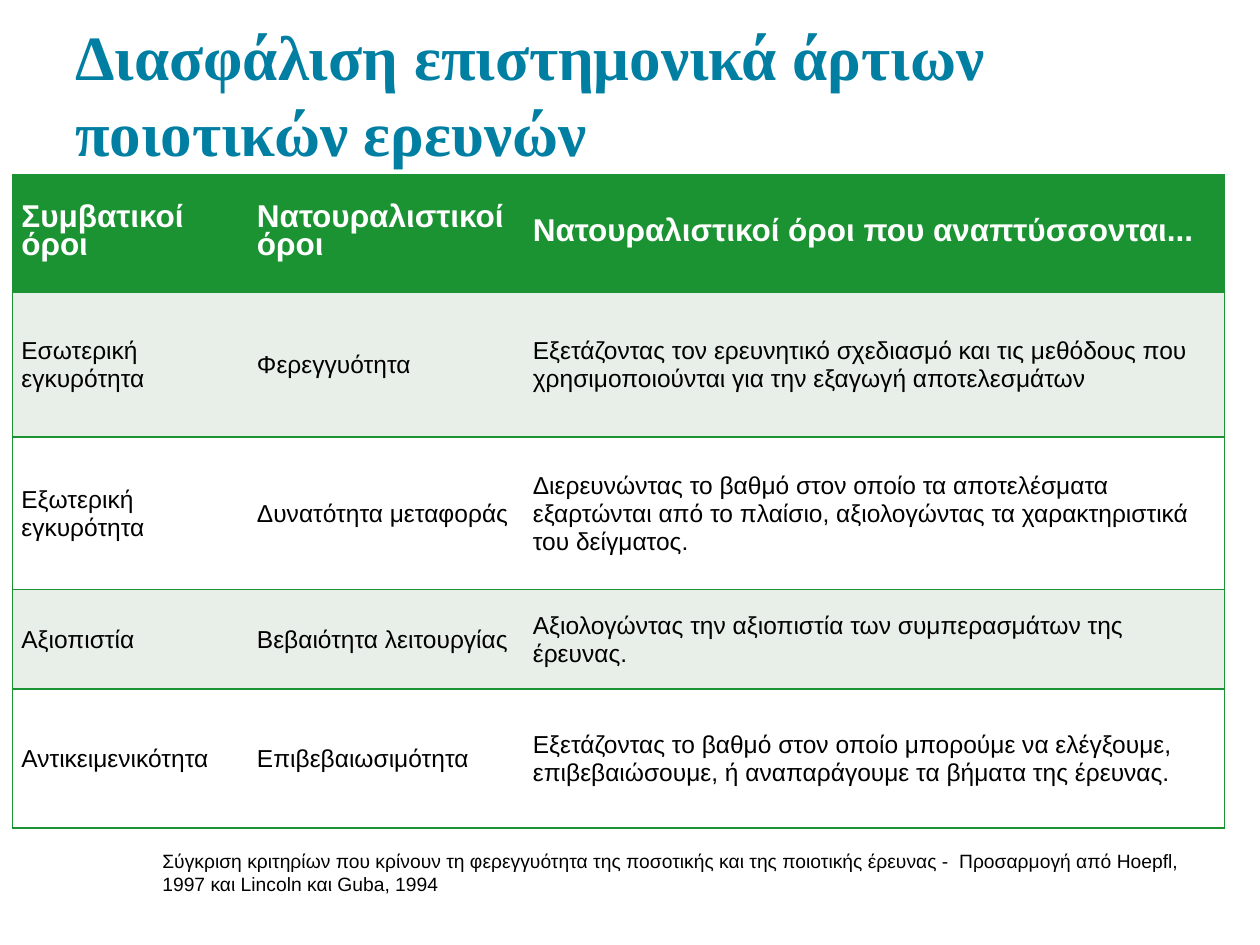
from dataclasses import dataclass

from lxml.etree import SubElement
from pptx import Presentation
from pptx.dml.color import RGBColor
from pptx.enum.text import MSO_ANCHOR
from pptx.oxml.ns import qn
from pptx.util import Inches, Pt


@dataclass(frozen=True)
class Theme:
    title: str = "007FA3"
    green: str = "1B9332"
    band: str = "E8EEE8"
    white: str = "FFFFFF"
    black: str = "000000"
    serif: str = "Times New Roman"
    sans: str = "Arial"
    title_size: int = 36
    header_size: int = 18
    body_size: int = 14
    caption_size: int = 11


THEME = Theme()

TITLE = "Διασφάλιση επιστημονικά άρτιων ποιοτικών ερευνών"
CAPTION = (
    "Σύγκριση κριτηρίων που κρίνουν τη φερεγγυότητα της ποσοτικής και της "
    "ποιοτικής έρευνας -  Προσαρμογή από Hoepfl, 1997 και Lincoln και Guba, 1994"
)
COLUMN_WIDTHS = (1.87, 2.19, 5.56)
ROW_HEIGHTS = (0.93, 1.15, 1.21, 0.79, 1.1)
CRITERIA = (
    ("Συμβατικοί όροι", "Νατουραλιστικοί όροι",
     "Νατουραλιστικοί όροι που αναπτύσσονται..."),
    ("Εσωτερική εγκυρότητα", "Φερεγγυότητα",
     "Εξετάζοντας τον ερευνητικό σχεδιασμό και τις μεθόδους που "
     "χρησιμοποιούνται για την εξαγωγή αποτελεσμάτων"),
    ("Εξωτερική εγκυρότητα", "Δυνατότητα μεταφοράς",
     "Διερευνώντας το βαθμό στον οποίο τα αποτελέσματα εξαρτώνται από το "
     "πλαίσιο, αξιολογώντας τα χαρακτηριστικά του δείγματος."),
    ("Αξιοπιστία", "Βεβαιότητα λειτουργίας",
     "Αξιολογώντας την αξιοπιστία των συμπερασμάτων της έρευνας."),
    ("Αντικειμενικότητα", "Επιβεβαιωσιμότητα",
     "Εξετάζοντας το βαθμό στον οποίο μπορούμε να ελέγξουμε, "
     "επιβεβαιώσουμε, ή αναπαράγουμε τα βήματα της έρευνας."),
)


def format_runs(p, font, size, color, bold=False):
    for r in p.runs:
        r.font.name = font
        r.font.size = Pt(size)
        r.font.bold = bold
        r.font.color.rgb = RGBColor.from_string(color)


def set_margins(target, side, edge):
    target.margin_left = target.margin_right = Inches(side)
    target.margin_top = target.margin_bottom = Inches(edge)


def add_text(slide, box, text, anchor):
    tf = slide.shapes.add_textbox(*map(Inches, box)).text_frame
    tf.word_wrap = True
    tf.vertical_anchor = anchor
    set_margins(tf, 0.1, 0.1)
    tf.text = text
    return tf.paragraphs[0]


def add_title(slide, box):
    p = add_text(slide, box, TITLE, MSO_ANCHOR.TOP)
    format_runs(p, THEME.serif, THEME.title_size, THEME.title, True)


def add_caption(slide, box):
    p = add_text(slide, box, CAPTION, MSO_ANCHOR.BOTTOM)
    format_runs(p, THEME.sans, THEME.caption_size, THEME.black)


def set_borders(cell, visible):
    tcPr = cell._tc.get_or_add_tcPr()
    for i, side in enumerate("LRTB"):
        ln = SubElement(tcPr, qn(f"a:ln{side}"), w=str(Pt(1)))
        if side in visible:
            fill = SubElement(ln, qn("a:solidFill"))
            SubElement(fill, qn("a:srgbClr"), val=THEME.green)
        else:
            SubElement(ln, qn("a:noFill"))
        tcPr.insert(i, ln)


def fill_cell(cell, text, fill, size, color, bold):
    cell.fill.solid()
    cell.fill.fore_color.rgb = RGBColor.from_string(fill)
    cell.vertical_anchor = MSO_ANCHOR.MIDDLE
    set_margins(cell, 0.07, 0)
    cell.text_frame.text = text
    p = cell.text_frame.paragraphs[0]
    p.line_spacing = Pt(16)
    p.space_after = Pt(6)
    format_runs(p, THEME.sans, size, color, bold)


def add_criteria_table(slide, box):
    table = slide.shapes.add_table(
        len(ROW_HEIGHTS), len(COLUMN_WIDTHS), *map(Inches, box)
    ).table
    for column, width in zip(table.columns, COLUMN_WIDTHS):
        column.width = Inches(width)
    edges = {0: "LTB", len(COLUMN_WIDTHS) - 1: "RTB"}
    for i, (row, height) in enumerate(zip(table.rows, ROW_HEIGHTS)):
        row.height = Inches(height)
        if i == 0:
            style = (THEME.green, THEME.header_size, THEME.white, True)
        else:
            fill = THEME.band if i % 2 else THEME.white
            style = (fill, THEME.body_size, THEME.black, False)
        for j, text in enumerate(CRITERIA[i]):
            cell = table.cell(i, j)
            fill_cell(cell, text, *style)
            set_borders(cell, edges.get(j, "TB"))


def main():
    prs = Presentation()
    prs.slide_width, prs.slide_height = Inches(10), Inches(7.5)
    slide = prs.slides.add_slide(prs.slide_layouts[6])
    add_title(slide, (0.5, 0.04, 9, 1.17))
    add_caption(slide, (1.19, 6.57, 8.53, 0.64))
    add_criteria_table(slide, (0.1, 1.39, 9.62, 5.18))
    prs.save("out.pptx")


if __name__ == "__main__":
    main()
